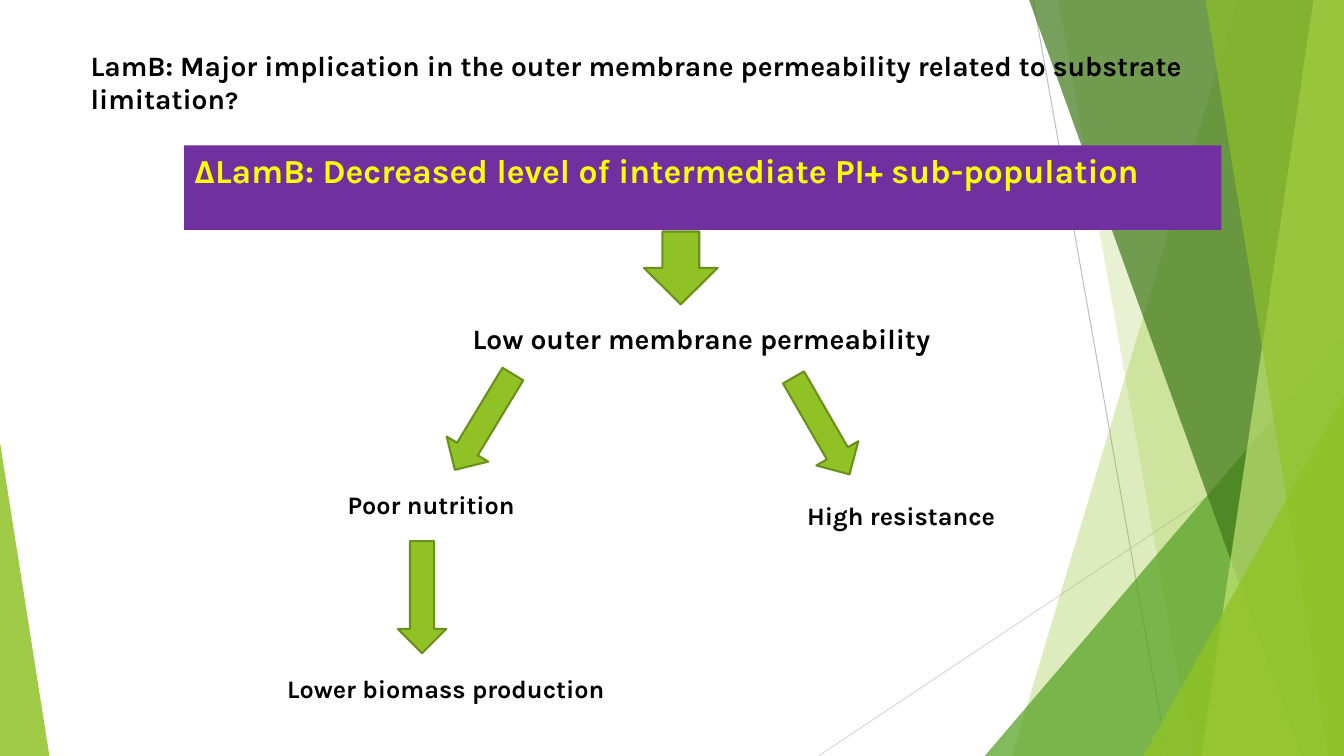
from pptx import Presentation
from pptx.util import Pt
from pptx.dml.color import RGBColor
from pptx.enum.shapes import MSO_SHAPE, MSO_CONNECTOR
from pptx.enum.text import PP_ALIGN, MSO_ANCHOR
from pptx.oxml.ns import qn
from lxml.etree import SubElement

WIDE, HIGH = 960, 540
GREEN = "90C226"

deck = Presentation()
deck.slide_width, deck.slide_height = Pt(WIDE), Pt(HIGH)
slide = deck.slides.add_slide(deck.slide_layouts[6])
shapes = slide.shapes


def paint(shape, color, alpha=100, edge=None):
    shape.shadow.inherit = False
    shape.fill.solid()
    shape.fill.fore_color.rgb = RGBColor.from_string(color)
    if alpha < 100:
        tone = shape.fill._xPr.find(qn("a:solidFill"))[0]
        SubElement(tone, qn("a:alpha"), val=str(alpha * 1000))
    if edge:
        shape.line.color.rgb = RGBColor.from_string(edge)
        shape.line.width = Pt(1.5)
    else:
        shape.line.fill.background()


def write(shape, runs, color="000000"):
    frame = shape.text_frame
    frame.word_wrap = True
    frame.vertical_anchor = MSO_ANCHOR.TOP
    para = frame.paragraphs[0]
    para.alignment = PP_ALIGN.LEFT
    for words, size in runs:
        run = para.add_run()
        run.text = words
        run.font.size = Pt(size)
        run.font.name = "Karla"
        run.font.bold = True
        run.font.color.rgb = RGBColor.from_string(color)


rays = [
    (738, 0, 833.8, HIGH, "BFBFBF"),
    (WIDE, 290.2, 584.6, HIGH, "D9D9D9"),
]
for left, top, right, foot, color in rays:
    ray = shapes.add_connector(
        MSO_CONNECTOR.STRAIGHT, Pt(left), Pt(top), Pt(right), Pt(foot))
    ray.line.color.rgb = RGBColor.from_string(color)
    ray.line.width = Pt(0.75)
    SubElement(ray._element.spPr, qn("a:effectLst"))

facets = [
    ("wedge", 884.2, 722.9, GREEN, 30),
    ("wedge", 756, 851.8, GREEN, 20),
    ("corner", 703.4, 239.8, "54A021", 72),
    ("wedge", 735.1, 929.5, "3F7819", 70),
    ("wedge", 938.2, 858.2, "C0E474", 70),
    ("wedge", 861.1, 949, GREEN, 65),
    ("corner", 816.5, 283, GREEN, 80),
]
for kind, first, second, color, alpha in facets:
    if kind == "wedge":
        pen = shapes.build_freeform(Pt(first), 0, scale=1.0)
        pen.add_line_segments(
            [(Pt(WIDE), 0), (Pt(WIDE), Pt(HIGH)), (Pt(second), Pt(HIGH))])
        facet = pen.convert_to_shape()
    else:
        facet = shapes.add_shape(
            MSO_SHAPE.ISOSCELES_TRIANGLE, Pt(first), Pt(second),
            Pt(WIDE - first), Pt(HIGH - second))
        facet.adjustments[0] = 1
    paint(facet, color, alpha)

spike = shapes.add_shape(
    MSO_SHAPE.ISOSCELES_TRIANGLE, 0, Pt(316), Pt(35.3), Pt(224))
spike.adjustments[0] = 0
paint(spike, GREEN, 85)

banner = shapes.add_shape(
    MSO_SHAPE.RECTANGLE, Pt(131.6), Pt(103.8), Pt(740.8), Pt(60.4))
paint(banner, "7030A0")
write(banner, [("ΔLamB: Decreased level of intermediate PI+ sub-population", 24)],
      "FFFF00")

arrows = [
    (460, 165.4, 52.6, 52, 0),
    (328.3, 261.4, 34.6, 80, 31.2),
    (569.5, 264.2, 34.6, 80, 330),
    (284.2, 386.6, 34.6, 80, 0),
]
for left, top, width, height, turn in arrows:
    arrow = shapes.add_shape(
        MSO_SHAPE.DOWN_ARROW, Pt(left), Pt(top), Pt(width), Pt(height))
    arrow.rotation = turn
    paint(arrow, GREEN, edge="6B901C")

title = ("LamB: Major implication in the outer membrane permeability "
         "related to substrate limitation")
labels = [
    (57.6, 31, 902, 31.7, [(title, 20), ("?", 18)]),
    (330.5, 226, 593, 31.7, [("Low outer membrane permeability", 20)]),
    (241.2, 346.3, 209, 28.8, [("Poor nutrition", 18)]),
    (569.5, 353.5, 181, 28.8, [("High resistance", 18)]),
    (198, 477.4, 265, 28.8, [("Lower biomass production", 18)]),
]
for left, top, width, height, runs in labels:
    label = shapes.add_textbox(Pt(left), Pt(top), Pt(width), Pt(height))
    write(label, runs)

deck.save("out.pptx")
